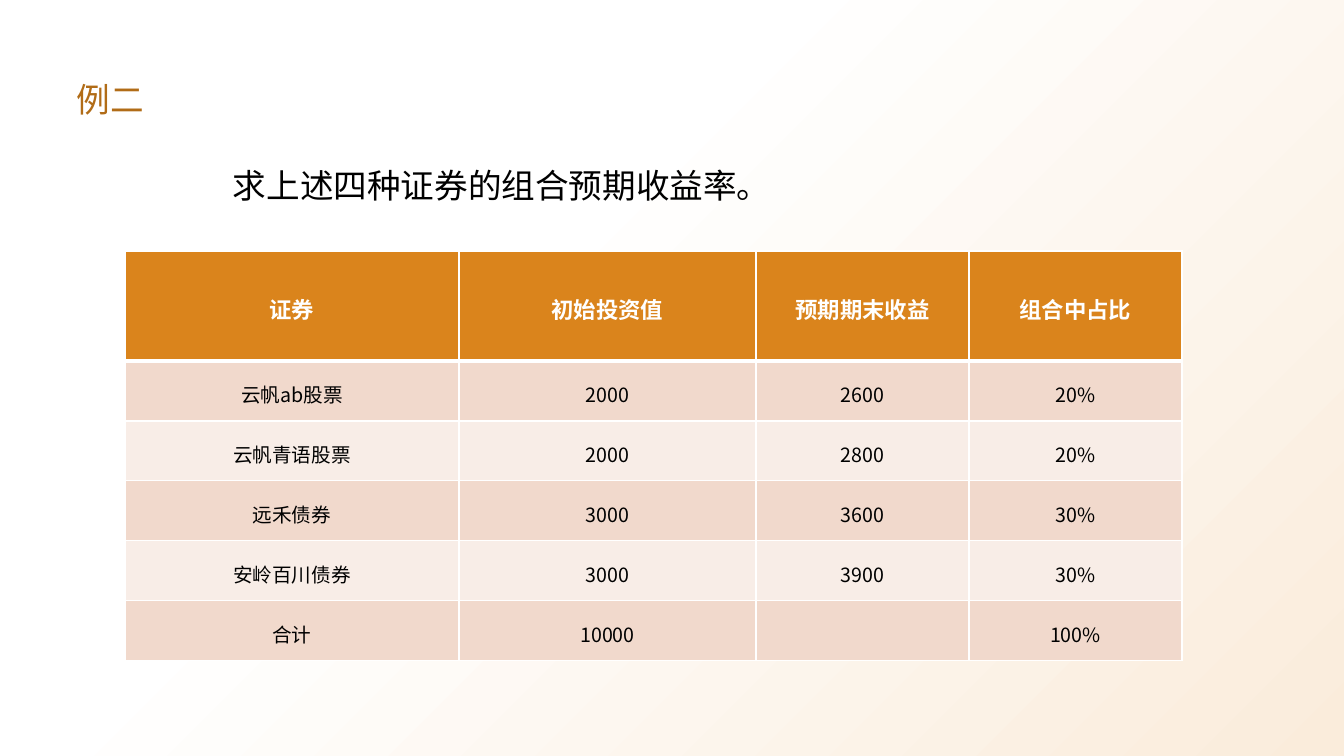
from pptx import Presentation
from pptx.dml.color import RGBColor
from pptx.enum.shapes import MSO_SHAPE
from pptx.enum.text import MSO_ANCHOR, PP_ALIGN
from pptx.util import Emu, Pt
from lxml import etree

RECT = MSO_SHAPE.RECTANGLE
MIDDLE, BOTTOM, TOP = MSO_ANCHOR.MIDDLE, MSO_ANCHOR.BOTTOM, MSO_ANCHOR.TOP
CENTER = PP_ALIGN.CENTER
NS = "http://schemas.openxmlformats.org/drawingml/2006/main"
SCALE = 12192000 / 1344

THEME = {
    "font": "Noto Sans CJK SC",
    "white": "FFFFFF", "black": "000000", "glow": "FAECDB",
    "title": "B16C17", "head": "DA841C", "bands": ["F1D9CC", "F8EDE7"],
    "large": 24, "label": 16, "body": 14,
}


def px(n):
    return Emu(round(n * SCALE))


def style(para, size, color, bold=False, gap=1.0):
    para.line_spacing = gap
    for run in para.runs:
        font = run.font
        font.size, font.bold, font.name = Pt(size), bold, THEME["font"]
        font.color.rgb = RGBColor.from_string(color)
        latin = run._r.rPr.find(f"{{{NS}}}latin")
        east = etree.Element(f"{{{NS}}}ea", typeface=THEME["font"])
        latin.addnext(east)


deck = Presentation()
deck.slide_width, deck.slide_height = px(1344), px(756)
slide = deck.slides.add_slide(deck.slide_layouts[6])

back = slide.shapes.add_shape(RECT, 0, 0, px(1344), px(756))
back.shadow.inherit = False
back.line.fill.background()
back.fill.gradient()
back.fill.gradient_angle = 315
for stop, place, color in zip(back.fill.gradient_stops, [0.37, 1], ["white", "glow"]):
    stop.position = place
    stop.color.rgb = RGBColor.from_string(THEME[color])

texts = [
    ("求上述四种证券的组合预期收益率。", 233, 153, 726, 64, TOP, "black", 1.3),
    ("例二", 77, 39, 1190, 80, BOTTOM, "title", 1.0),
]
for words, left, top, width, height, anchor, color, gap in texts:
    box = slide.shapes.add_textbox(px(left), px(top), px(width), px(height))
    frame = box.text_frame
    frame.word_wrap = True
    frame.vertical_anchor = anchor
    frame.margin_left = frame.margin_right = frame.margin_top = frame.margin_bottom = 0
    frame.text = words
    style(frame.paragraphs[0], THEME["large"], THEME[color], gap=gap)

rows = [
    ["证券", "初始投资值", "预期期末收益", "组合中占比"],
    ["云帆ab股票", "2000", "2600", "20%"],
    ["云帆青语股票", "2000", "2800", "20%"],
    ["远禾债券", "3000", "3600", "30%"],
    ["安岭百川债券", "3000", "3900", "30%"],
    ["合计", "10000", "", "100%"],
]
widths = [334, 297, 213, 213]
heights = [110] + [60] * 5
grid = slide.shapes.add_table(
    len(rows), len(widths), px(125), px(251), px(sum(widths)), px(sum(heights))
).table
grid.horz_banding = False
for col, width in zip(grid.columns, widths):
    col.width = px(width)

for r, row in enumerate(rows):
    grid.rows[r].height = px(heights[r])
    head = r == 0
    fill = THEME["head"] if head else THEME["bands"][(r - 1) % 2]
    size = THEME["label"] if head else THEME["body"]
    ink = THEME["white"] if head else THEME["black"]
    edges = {"lnL": 1, "lnR": 1, "lnT": 3 if r == 1 else 1, "lnB": 3 if head else 1}
    for c, words in enumerate(row):
        cell = grid.cell(r, c)
        cell.vertical_anchor = MIDDLE
        cell.margin_left = cell.margin_right = px(19)
        cell.margin_top = cell.margin_bottom = px(7)
        cell.text_frame.text = words
        para = cell.text_frame.paragraphs[0]
        para.alignment = CENTER
        style(para, size, ink, head, 1.2)
        props = cell._tc.get_or_add_tcPr()
        for edge, weight in edges.items():
            line = etree.SubElement(props, f"{{{NS}}}{edge}", w=str(Pt(weight)))
            solid = etree.SubElement(line, f"{{{NS}}}solidFill")
            etree.SubElement(solid, f"{{{NS}}}srgbClr", val=THEME["white"])
        cell.fill.solid()
        cell.fill.fore_color.rgb = RGBColor.from_string(fill)

deck.save("out.pptx")
